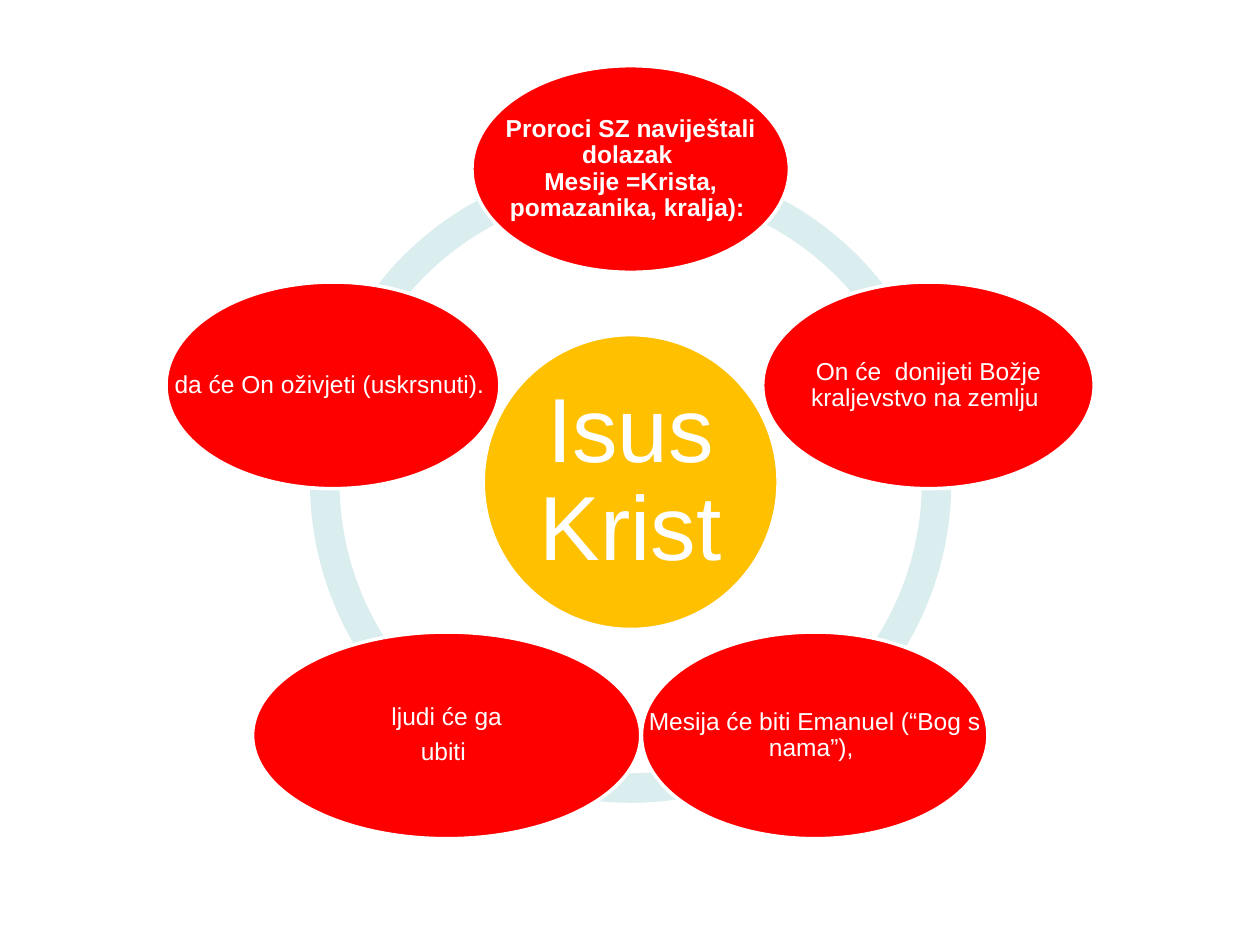
from dataclasses import dataclass
from math import cos, radians, sin

from pptx import Presentation
from pptx.dml.color import RGBColor
from pptx.enum.shapes import MSO_SHAPE
from pptx.enum.text import MSO_ANCHOR, PP_ALIGN
from pptx.util import Pt


@dataclass(frozen=True)
class Theme:
    font: str = "Arial"
    ring: RGBColor = RGBColor(0xDA, 0xED, 0xEF)
    core: RGBColor = RGBColor(0xFF, 0xC0, 0x00)
    node: RGBColor = RGBColor(0xFF, 0x00, 0x00)
    white: RGBColor = RGBColor(0xFF, 0xFF, 0xFF)
    big: int = 52
    small: int = 14


THEME = Theme()

# Geometry in points
MID_X, MID_Y = 360.4, 275.5
RING = 366.5
ORBIT = 178.9
CORE = 168.5
NODE_H = 118.1

# Clockwise from the top: text, ellipse width, bold
NODES = [
    ("Proroci SZ naviještali dolazak \vMesije =Krista, pomazanika, kralja): ",
     181.4, True),
    ("On će  donijeti Božje kraljevstvo na zemlju ", 189.4, False),
    ("Mesija će biti Emanuel (“Bog s nama”), ", 198, False),
    ("ljudi će ga\nubiti ", 221.8, False),
    ("da će On oživjeti (uskrsnuti). ", 190.8, False),
]
STEP = 360 / len(NODES)


def frame(x, y, width, height):
    """Turn a centre and a size into left, top, width, height."""
    return Pt(x - width / 2), Pt(y - height / 2), Pt(width), Pt(height)


def add_arc(slide, start):
    arc = slide.shapes.add_shape(
        MSO_SHAPE.BLOCK_ARC, *frame(MID_X, MID_Y, RING, RING))
    # Angles are stored in 60000ths of a degree, adjustments in 100000ths
    arc.adjustments[0] = start % 360 * 0.6
    arc.adjustments[1] = (start + STEP) % 360 * 0.6
    arc.adjustments[2] = 0.046
    arc.shadow.inherit = False
    arc.fill.solid()
    arc.fill.fore_color.rgb = THEME.ring
    arc.line.fill.background()


def add_label(group, box, text, size, inset, bold):
    """Lay text over the full box, wider than an ellipse's own text area."""
    body = group.shapes.add_textbox(*box).text_frame
    body.word_wrap = True
    body.vertical_anchor = MSO_ANCHOR.MIDDLE
    body.margin_left = body.margin_right = Pt(inset)
    body.margin_top = body.margin_bottom = Pt(inset)
    body.text = text
    for para in body.paragraphs:
        para.alignment = PP_ALIGN.CENTER
        para.line_spacing = 0.9
        para.space_after = Pt(round(size * 0.35, 1))
        para.font.name = THEME.font
        para.font.size = Pt(size)
        para.font.bold = bold
        para.font.color.rgb = THEME.white


def add_bubble(slide, box, fill, text, size, inset, bold=False):
    group = slide.shapes.add_group_shape()
    oval = group.shapes.add_shape(MSO_SHAPE.OVAL, *box)
    oval.shadow.inherit = False
    oval.fill.solid()
    oval.fill.fore_color.rgb = fill
    oval.line.color.rgb = THEME.white
    oval.line.width = Pt(2)
    add_label(group, box, text, size, inset, bold)


def main():
    deck = Presentation()
    deck.slide_width, deck.slide_height = Pt(720), Pt(540)
    slide = deck.slides.add_slide(deck.slide_layouts[6])

    angles = [270 + i * STEP for i in range(len(NODES))]
    for angle in angles:
        add_arc(slide, angle)

    add_bubble(slide, frame(MID_X, MID_Y, CORE, CORE), THEME.core,
               "Isus Krist", THEME.big, 5)
    for angle, (text, width, bold) in zip(angles, NODES):
        x = MID_X + ORBIT * cos(radians(angle))
        y = MID_Y + ORBIT * sin(radians(angle))
        add_bubble(slide, frame(x, y, width, NODE_H), THEME.node,
                   text, THEME.small, 1.4, bold)

    deck.save("out.pptx")


if __name__ == "__main__":
    main()
